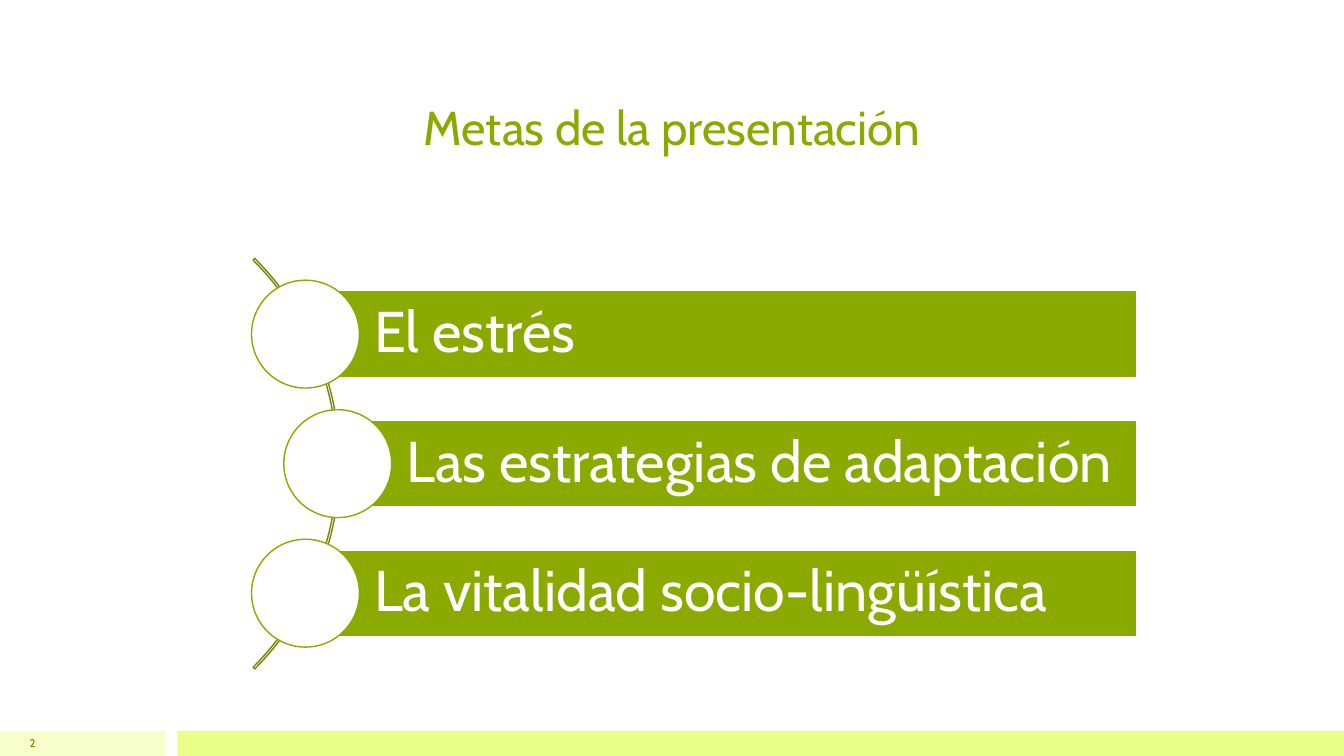
from dataclasses import dataclass

from pptx import Presentation
from pptx.dml.color import RGBColor
from pptx.enum.shapes import MSO_SHAPE
from pptx.enum.text import MSO_ANCHOR, PP_ALIGN
from pptx.util import Inches, Pt


@dataclass(frozen=True)
class Theme:
    font: str = "Cabin"
    green: str = "8BAA00"
    dark_green: str = "6F8800"
    number_green: str = "688000"
    lime: str = "E9FF88"
    pale_lime: str = "F6FFCC"
    white: str = "FFFFFF"
    title_size: int = 34
    goal_size: int = 41
    number_size: int = 8


THEME = Theme()
GOALS = ["El estrés", "Las estrategias de adaptación", "La vitalidad socio-lingüística"]

ARC_SIZE = 5.76
ARC_CENTER_X, ARC_CENTER_Y = 0.49, 4.6
GOAL_PITCH = 1.285
OUTER_X, MIDDLE_X = 3.03, 3.35
BAR_RIGHT, BAR_HEIGHT = 11.27, 0.86
CIRCLE_SIZE = 1.07


def add_shape(slide, kind, left, top, width, height, fill=None, line=None):
    sp = slide.shapes.add_shape(kind, Inches(left), Inches(top), Inches(width), Inches(height))
    sp.shadow.inherit = False
    if fill:
        sp.fill.solid()
        sp.fill.fore_color.rgb = RGBColor.from_string(fill)
    else:
        sp.fill.background()
    if line:
        sp.line.color.rgb = RGBColor.from_string(line)
        sp.line.width = Pt(1)
    else:
        sp.line.fill.background()
    return sp


def set_text(sp, text, *, size, color, align=PP_ALIGN.LEFT, anchor=MSO_ANCHOR.MIDDLE,
             insets=(0.1, 0.05, 0.1, 0.05), line_spacing=1.0):
    """Fill a shape with one formatted paragraph; insets run left, top, right, bottom."""
    tf = sp.text_frame
    tf.word_wrap = True
    tf.vertical_anchor = anchor
    tf.margin_left, tf.margin_top, tf.margin_right, tf.margin_bottom = map(Inches, insets)
    p = tf.paragraphs[0]
    p.alignment = align
    p.line_spacing = line_spacing
    r = p.add_run()
    r.text = text
    r.font.name = THEME.font
    r.font.size = Pt(size)
    r.font.color.rgb = RGBColor.from_string(color)


def add_text(slide, text, left, top, width, height, **text_format):
    sp = slide.shapes.add_textbox(Inches(left), Inches(top), Inches(width), Inches(height))
    set_text(sp, text, **text_format)


def add_footer(slide, number):
    add_shape(slide, MSO_SHAPE.RECTANGLE, 0, 7.25, 1.64, 0.25, fill=THEME.pale_lime)
    add_shape(slide, MSO_SHAPE.RECTANGLE, 1.76, 7.25, 11.57, 0.25, fill=THEME.lime)
    add_text(slide, number, 0, 7.25, 0.45, 0.25, size=THEME.number_size,
             color=THEME.number_green, align=PP_ALIGN.RIGHT)


def add_arc(slide):
    arc = add_shape(slide, MSO_SHAPE.BLOCK_ARC, ARC_CENTER_X - ARC_SIZE / 2,
                    ARC_CENTER_Y - ARC_SIZE / 2, ARC_SIZE, ARC_SIZE, line=THEME.dark_green)
    for i, value in enumerate((189, 27, 0.004)):
        arc.adjustments[i] = value


def add_goal(slide, text, center_x, center_y):
    """Draw a bar that starts at the centre of its circle."""
    bar = add_shape(slide, MSO_SHAPE.RECTANGLE, center_x, center_y - BAR_HEIGHT / 2,
                    BAR_RIGHT - center_x, BAR_HEIGHT, fill=THEME.green, line=THEME.white)
    set_text(bar, text, size=THEME.goal_size, color=THEME.white,
             insets=(0.68, 0.11, 0.11, 0.11), line_spacing=0.9)
    add_shape(slide, MSO_SHAPE.OVAL, center_x - CIRCLE_SIZE / 2, center_y - CIRCLE_SIZE / 2,
              CIRCLE_SIZE, CIRCLE_SIZE, fill=THEME.white, line=THEME.green)


def main():
    prs = Presentation()
    prs.slide_width, prs.slide_height = Inches(13.33), Inches(7.5)
    slide = prs.slides.add_slide(prs.slide_layouts[6])
    add_footer(slide, "2")
    add_text(slide, "Metas de la presentación", 1.54, 0.3, 10.25, 1.29, size=THEME.title_size,
             color=THEME.green, align=PP_ALIGN.CENTER, anchor=MSO_ANCHOR.BOTTOM)
    add_arc(slide)
    middle = len(GOALS) // 2
    for i, goal in enumerate(GOALS):
        center_x = MIDDLE_X if i == middle else OUTER_X
        add_goal(slide, goal, center_x, ARC_CENTER_Y + (i - middle) * GOAL_PITCH)
    prs.save("out.pptx")


if __name__ == "__main__":
    main()
